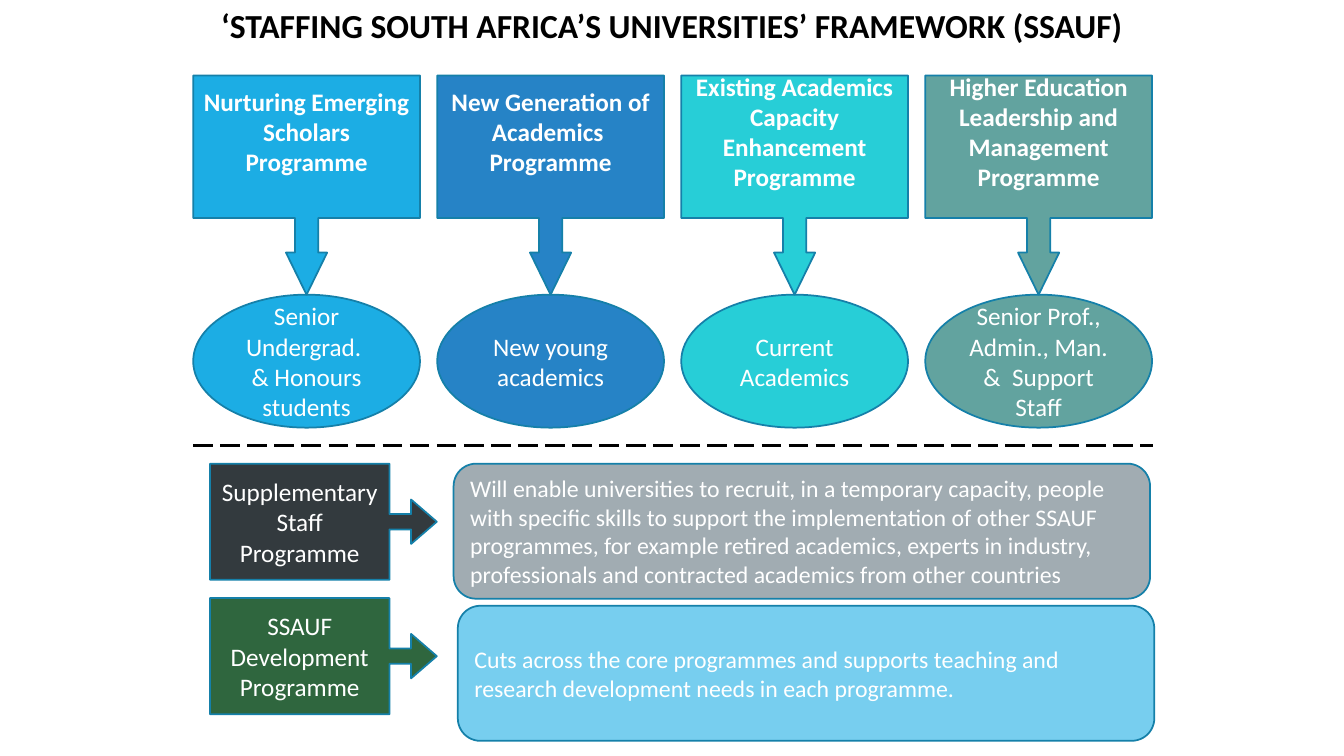
"""Build the staffing framework slide."""
import dataclasses

import pptx
import pptx.dml.color
import pptx.enum.dml
import pptx.enum.shapes
import pptx.enum.text
import pptx.oxml
import pptx.oxml.ns
import pptx.util

Pt = pptx.util.Pt
Kind = pptx.enum.shapes.MSO_SHAPE
Align = pptx.enum.text.PP_ALIGN


@dataclasses.dataclass(frozen=True)
class Theme:
    """Colours and type sizes of the slide."""
    font: str = "Calibri"
    head: int = 24
    body: int = 18
    note: int = 17
    black: str = "000000"
    white: str = "FFFFFF"
    edge: str = "1580A9"
    cols: tuple = ("1CADE4", "2683C6", "27CED7", "62A39F")
    sides: tuple = ("333A3E", "2F663E")
    panels: tuple = ("A1ACB2", "77CEEF")


THEME = Theme()

CORE = (
    ("Nurturing Emerging Scholars Programme",
     "Senior Undergrad.  & Honours students"),
    ("New Generation of Academics  Programme", "New young academics"),
    ("Existing Academics Capacity Enhancement Programme",
     "Current Academics"),
    ("Higher Education Leadership and Management Programme",
     "Senior Prof., Admin., Man. &  Support Staff"),
)
CROSS = (
    ("Supplementary Staff Programme",
     "Will enable universities to recruit, in a temporary capacity, people "
     "with specific skills to support the implementation of other SSAUF "
     "programmes, for example retired academics, experts in industry, "
     "professionals and contracted academics from other countries"),
    ("SSAUF Development Programme",
     "Cuts across the core programmes and supports teaching and research "
     "development needs in each programme."),
)


def paint(code):
    """Return the colour for a hex code."""
    return pptx.dml.color.RGBColor.from_string(code)


def write(frame, text, size, tint, bold=False, align=Align.CENTER):
    """Put one styled run into a text frame."""
    frame.word_wrap = True
    para = frame.paragraphs[0]
    para.alignment = align
    run = para.add_run()
    run.text = text
    run.font.name = THEME.font
    run.font.size = Pt(size)
    run.font.bold = bold
    run.font.color.rgb = paint(tint)


def block(slide, kind, box, fill, text, size=THEME.body, adjust=(), **style):
    """Add a filled shape with text in it."""
    shape = slide.shapes.add_shape(kind, *map(Pt, box))
    shape.shadow.inherit = False
    for spot, value in enumerate(adjust):
        shape.adjustments[spot] = value
    shape.fill.solid()
    shape.fill.fore_color.rgb = paint(fill)
    shape.line.color.rgb = paint(THEME.edge)
    shape.line.width = Pt(1.25)
    shape.text_frame.vertical_anchor = pptx.enum.text.MSO_ANCHOR.MIDDLE
    write(shape.text_frame, text, size, THEME.white, **style)
    return shape


def title(slide, box):
    """Add the heading."""
    frame = slide.shapes.add_textbox(*map(Pt, box)).text_frame
    frame.auto_size = pptx.enum.text.MSO_AUTO_SIZE.SHAPE_TO_FIT_TEXT
    write(frame, "‘STAFFING SOUTH AFRICA’S UNIVERSITIES’ FRAMEWORK (SSAUF)",
          THEME.head, THEME.black, bold=True)


def core(slide, box):
    """Add four callouts, each above the group it serves."""
    left, top, width, height = box
    wide, gap, drop = 162, 12.3, 156.5
    for col, ((name, group), fill) in enumerate(zip(CORE, THEME.cols)):
        x = left + col * (wide + gap)
        block(slide, Kind.OVAL, (x, top + drop, wide, height - drop),
              fill, group)
        call = block(slide, Kind.DOWN_ARROW_CALLOUT, (x, top, wide, drop),
                     fill, name, adjust=(0.106, 0.094, 0.192, 0.65),
                     bold=True)
        call.text_frame.margin_bottom = Pt(25.6)


def rule(slide, box):
    """Add the dashed line across the top of a box."""
    left, top, width, height = box
    line = slide.shapes.add_connector(
        pptx.enum.shapes.MSO_CONNECTOR.STRAIGHT,
        Pt(left), Pt(top), Pt(left + width), Pt(top + height))
    line.line.color.rgb = paint(THEME.black)
    line.line.width = Pt(1.75)
    line.line.dash_style = pptx.enum.dml.MSO_LINE.LONG_DASH
    props = line._element.spPr
    props.append(pptx.oxml.parse_xml(
        "<a:effectLst %s/>" % pptx.oxml.ns.nsdecls("a")))


def cross(slide, box):
    """Add the two cross-cutting programmes with their panels."""
    left, top, width, height = box
    wide, tall, inset = 162, 96.5, 174
    step = height - tall
    rows = zip(CROSS, THEME.sides, THEME.panels)
    for row, ((name, note), side, panel) in enumerate(rows):
        block(slide, Kind.RIGHT_ARROW_CALLOUT,
              (left, top + row * 96, wide, 83), side, name,
              adjust=(0.132, 0.191, 0.221, 0.791))
        block(slide, Kind.ROUNDED_RECTANGLE,
              (left + inset + row * 3, top + row * step,
               width - inset, tall),
              panel, note, THEME.note, align=Align.LEFT)


def main():
    """Build and save the deck."""
    deck = pptx.Presentation()
    deck.slide_width, deck.slide_height = Pt(960), Pt(540)
    slide = deck.slides.add_slide(deck.slide_layouts[6])
    title(slide, (120, 0, 720, 36.7))
    core(slide, (138, 54, 685, 251.5))
    rule(slide, (138, 318.2, 685.5, 0))
    cross(slide, (150, 331.2, 671.5, 198))
    deck.save("out.pptx")


if __name__ == "__main__":
    main()
